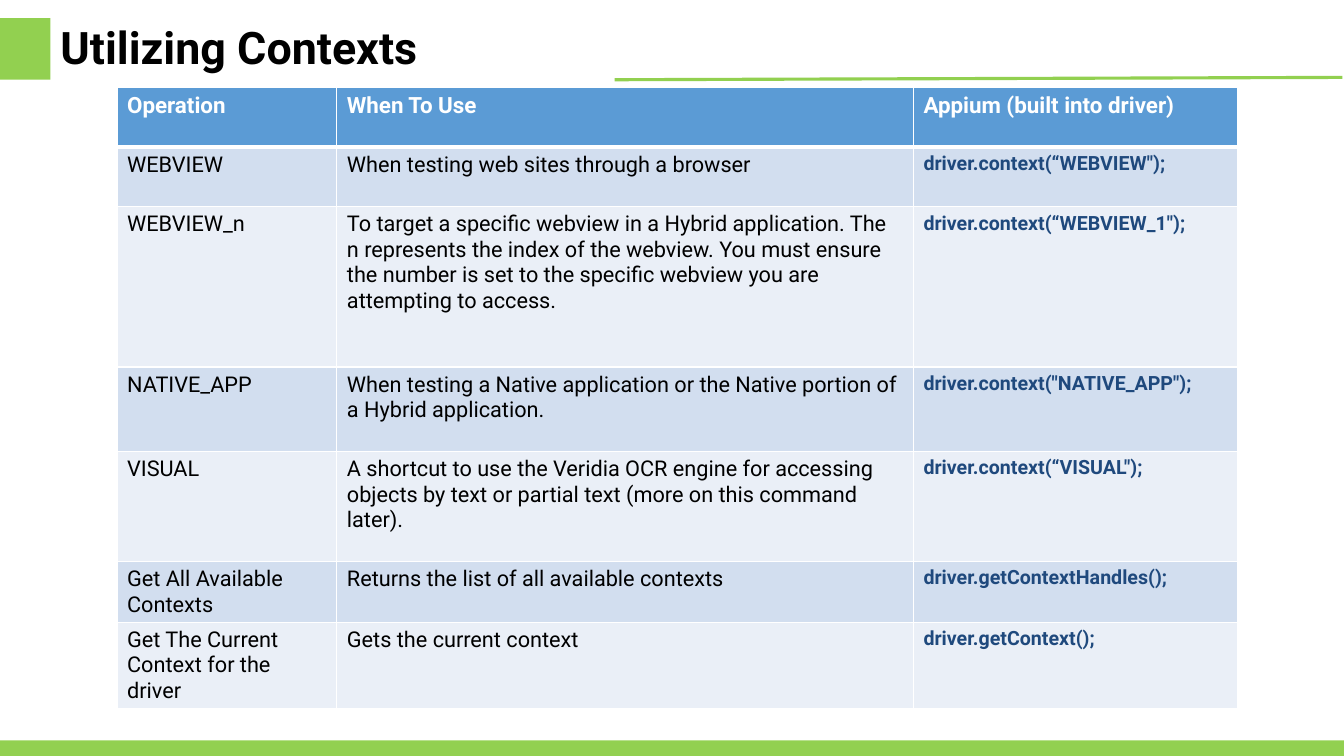
import pptx
import pptx.util
import pptx.dml.color
import pptx.enum.shapes
import pptx.enum.text
from lxml import etree
from pptx.util import Cm

COLORS = {
    "green": "92D050", "header": "5B9BD5", "band_dark": "D2DEEF",
    "band_light": "EAEFF7", "code": "1F497D", "black": "000000", "white": "FFFFFF",
}
FONT = "Roboto"
DRAWING_NS = "http://schemas.openxmlformats.org/drawingml/2006/main"

COLUMN_WIDTHS = [5.54, 14.53, 8.18]
ROW_HEIGHTS = [1.5, 1.5, 4.04, 2.13, 2.77, 1.5, 2.13]
CONTEXT_ROWS = [
    ("Operation", "When To Use", "Appium (built into driver)"),
    ("WEBVIEW", "When testing web sites through a browser",
     'driver.context(“WEBVIEW");'),
    ("WEBVIEW_n",
     "To target a specific webview in a Hybrid application. The n represents "
     "the index of the webview. You must ensure the number is set to the "
     "specific webview you are attempting to access.",
     'driver.context(“WEBVIEW_1");'),
    ("NATIVE_APP",
     "When testing a Native application or the Native portion of a Hybrid application.",
     'driver.context("NATIVE_APP");'),
    ("VISUAL",
     "A shortcut to use the Veridia OCR engine for accessing objects by text "
     "or partial text (more on this command later).",
     'driver.context(“VISUAL");'),
    ("Get All Available Contexts", "Returns the list of all available contexts",
     "driver.getContextHandles();"),
    ("Get The Current Context for the driver", "Gets the current context",
     "driver.getContext();"),
]


def rgb(name):
    return pptx.dml.color.RGBColor.from_string(COLORS[name])


def style_paragraph(para, size, color, bold):
    para.font.name = FONT
    para.font.size = pptx.util.Pt(size)
    para.font.bold = bold
    para.font.color.rgb = rgb(color)


def add_block(page, left, top, width, height):
    block = page.shapes.add_shape(
        pptx.enum.shapes.MSO_SHAPE.RECTANGLE, Cm(left), Cm(top), Cm(width), Cm(height))
    block.shadow.inherit = False
    block.fill.solid()
    block.fill.fore_color.rgb = rgb("green")
    block.line.fill.background()


def add_rule(page, start_x, start_y, end_x, end_y):
    rule = page.shapes.add_connector(
        pptx.enum.shapes.MSO_CONNECTOR.STRAIGHT,
        Cm(start_x), Cm(start_y), Cm(end_x), Cm(end_y))
    rule.line.color.rgb = rgb("green")
    rule.line.width = pptx.util.Pt(2.25)
    etree.SubElement(rule._element.spPr, f"{{{DRAWING_NS}}}effectLst")


def set_title(page, text):
    title = page.shapes.title
    title.left, title.top, title.width, title.height = Cm(1.27), Cm(0.15), Cm(14.22), Cm(2.21)
    title.text_frame.text = text
    title.text_frame.vertical_anchor = pptx.enum.text.MSO_ANCHOR.MIDDLE
    para = title.text_frame.paragraphs[0]
    para.alignment = pptx.enum.text.PP_ALIGN.LEFT
    para.line_spacing = 0.9
    style_paragraph(para, 32, "black", True)


def set_borders(cell, top=1, bottom=1):
    properties = cell._tc.get_or_add_tcPr()
    for side, points in (("L", 1), ("R", 1), ("T", top), ("B", bottom)):
        line = etree.SubElement(
            properties, f"{{{DRAWING_NS}}}ln{side}", w=str(pptx.util.Pt(points)))
        fill = etree.SubElement(line, f"{{{DRAWING_NS}}}solidFill")
        etree.SubElement(fill, f"{{{DRAWING_NS}}}srgbClr", val=COLORS["white"])


def fill_cell(cell, text, row, column):
    # Header row, code column, then plain text
    if row == 0:
        size, color, bold = 16, "white", True
    elif column == 2:
        size, color, bold = 14, "code", True
    else:
        size, color, bold = 15.5, "black", False
    cell.text = text
    style_paragraph(cell.text_frame.paragraphs[0], size, color, bold)
    set_borders(cell, top=3 if row == 1 else 1, bottom=3 if row == 0 else 1)
    cell.fill.solid()
    band = "band_dark" if row % 2 else "band_light"
    cell.fill.fore_color.rgb = rgb("header" if row == 0 else band)


def add_context_table(page, left, top):
    table = page.shapes.add_table(
        len(ROW_HEIGHTS), len(COLUMN_WIDTHS), Cm(left), Cm(top),
        Cm(sum(COLUMN_WIDTHS)), Cm(sum(ROW_HEIGHTS))).table
    for column, width in zip(table.columns, COLUMN_WIDTHS):
        column.width = Cm(width)
    for row, height in zip(table.rows, ROW_HEIGHTS):
        row.height = Cm(height)
    for row, texts in enumerate(CONTEXT_ROWS):
        for column, text in enumerate(texts):
            fill_cell(table.cell(row, column), text, row, column)


def main():
    deck = pptx.Presentation()
    deck.slide_width, deck.slide_height = Cm(33.87), Cm(19.05)
    page = deck.slides.add_slide(deck.slide_layouts.get_by_name("Title Only"))

    # Green frame: title block, rule and footer band
    add_block(page, 0, 0.46, 1.27, 1.55)
    add_rule(page, 15.49, 2.01, 33.83, 1.95)
    add_block(page, 0, 18.66, 33.87, 0.39)

    # Title and table of contexts
    set_title(page, "Utilizing Contexts")
    add_context_table(page, 2.95, 2.21)

    deck.save("out.pptx")


if __name__ == "__main__":
    main()
